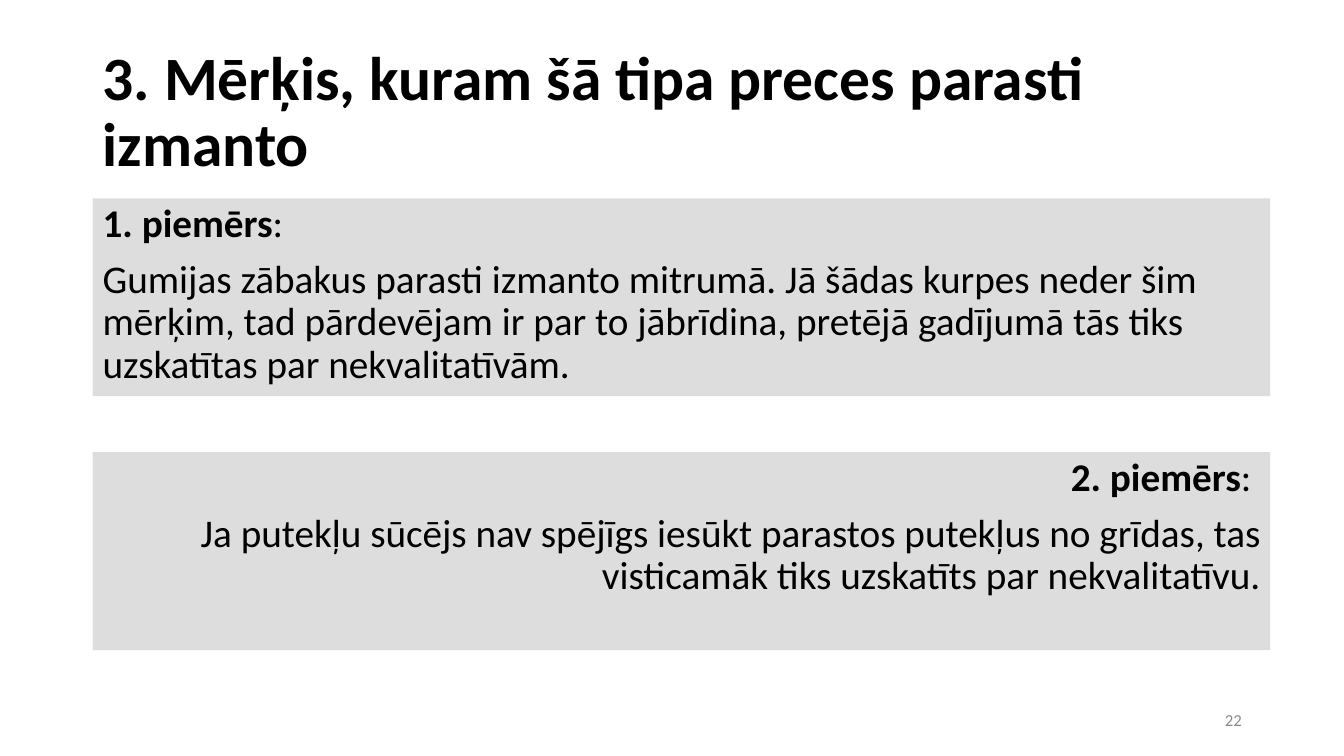
from pptx import Presentation
from pptx.dml.color import RGBColor
from pptx.enum.shapes import MSO_SHAPE
from pptx.enum.text import MSO_ANCHOR, PP_ALIGN
from pptx.util import Pt

BLACK = RGBColor(0x00, 0x00, 0x00)
PANEL_GRAY = RGBColor(0xDD, 0xDD, 0xDD)
NUMBER_GRAY = RGBColor(0x8B, 0x8B, 0x8B)
FONT = "Calibri"

LEFT = 66.24
PANEL_WIDTH, PANEL_HEIGHT = 841, 141.3
PANEL_TOP, PANEL_STEP = 141.7, 181.3

EXAMPLES = [
    ("1. piemērs", ":",
     "Gumijas zābakus parasti izmanto mitrumā. Jā šādas kurpes neder šim mērķim, "
     "tad pārdevējam ir par to jābrīdina, pretējā gadījumā tās tiks uzskatītas par "
     "nekvalitatīvām.", PP_ALIGN.LEFT),
    ("2. piemērs", ": ",
     "Ja putekļu sūcējs nav spējīgs iesūkt parastos putekļus no grīdas, tas "
     "visticamāk tiks uzskatīts par nekvalitatīvu.", PP_ALIGN.RIGHT),
]


def format_run(run, size, color=BLACK, bold=False):
    font = run.font
    font.name, font.size, font.bold = FONT, Pt(size), bold
    font.color.rgb = color


def add_line(slide, box, text, size, color=BLACK, bold=False, align=PP_ALIGN.LEFT,
             line_spacing=1.0):
    """Add a vertically centred text box with one paragraph."""
    text_frame = slide.shapes.add_textbox(*map(Pt, box)).text_frame
    text_frame.word_wrap = True
    text_frame.vertical_anchor = MSO_ANCHOR.MIDDLE
    text_frame.text = text
    paragraph = text_frame.paragraphs[0]
    paragraph.alignment = align
    paragraph.line_spacing = line_spacing
    format_run(paragraph.runs[0], size, color, bold)


def add_example(slide, box, label, mark, body, align):
    """Add a gray panel with a bold label above its example text."""
    panel = slide.shapes.add_shape(MSO_SHAPE.RECTANGLE, *map(Pt, box))
    panel.shadow.inherit = False
    panel.fill.solid()
    panel.fill.fore_color.rgb = PANEL_GRAY
    panel.line.fill.background()

    text_frame = panel.text_frame
    text_frame.word_wrap = True
    text_frame.vertical_anchor = MSO_ANCHOR.TOP
    text_frame.text = f"{label}\n{body}"
    text_frame.paragraphs[0].add_run().text = mark
    for paragraph in text_frame.paragraphs:
        paragraph.alignment = align
        paragraph.line_spacing = 0.9
        paragraph.space_before = Pt(10)
        for run in paragraph.runs:
            format_run(run, 28, bold=run.text == label)


def main():
    presentation = Presentation()
    presentation.slide_width, presentation.slide_height = Pt(960), Pt(540)
    slide = presentation.slides.add_slide(presentation.slide_layouts[6])

    add_line(slide, (LEFT, 28.8, 828, 104.4),
             "3. Mērķis, kuram šā tipa preces parasti izmanto", 44,
             bold=True, line_spacing=0.9)
    for index, example in enumerate(EXAMPLES):
        top = PANEL_TOP + index * PANEL_STEP
        add_example(slide, (LEFT, top, PANEL_WIDTH, PANEL_HEIGHT), *example)
    add_line(slide, (678.24, 500.4, 216, 28.1), "22", 12, NUMBER_GRAY,
             align=PP_ALIGN.RIGHT)

    presentation.save("out.pptx")


if __name__ == "__main__":
    main()
